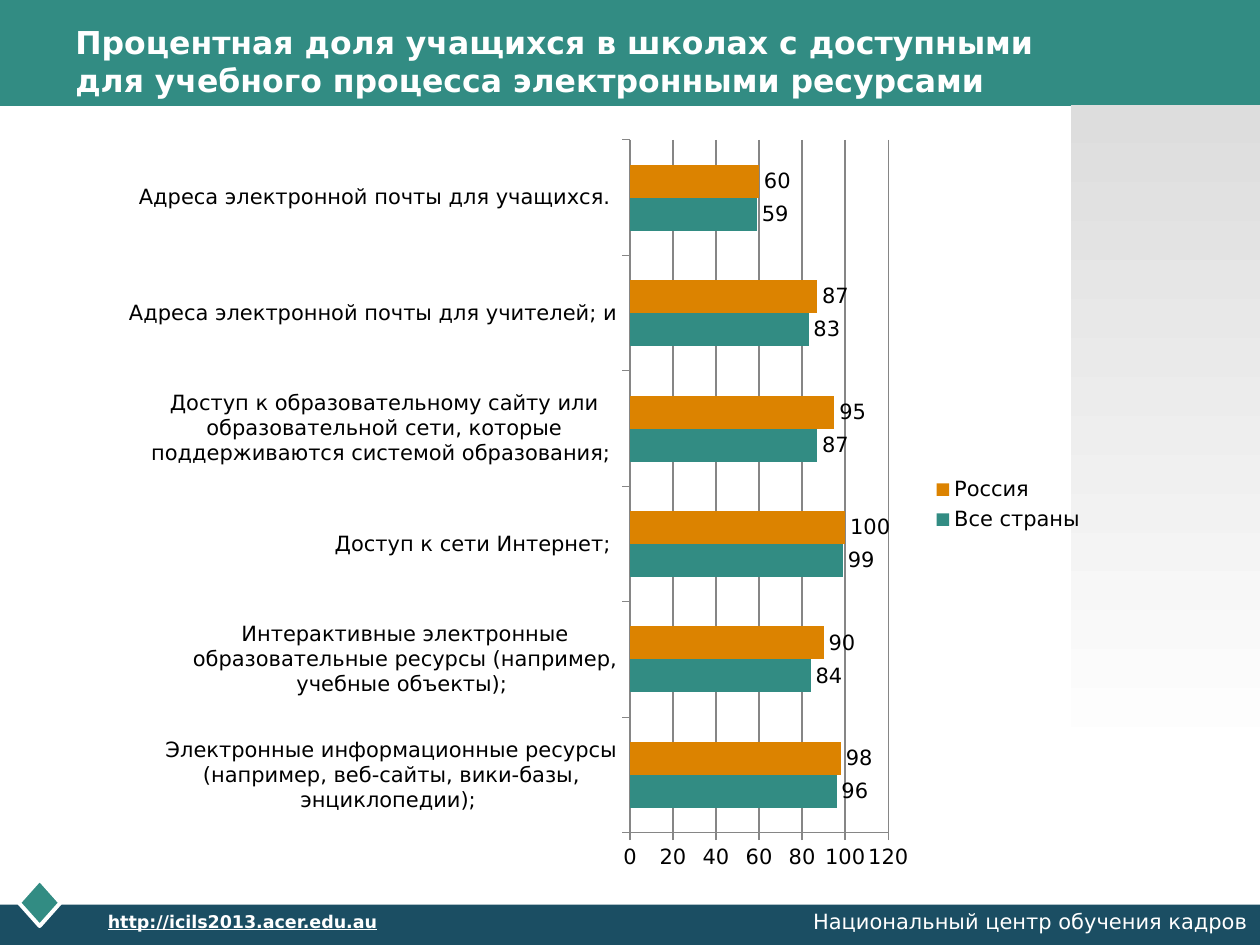
import pptx
import pptx.chart.data
import pptx.dml.color
import pptx.enum.chart
import pptx.enum.shapes
import pptx.enum.text
import pptx.util
from lxml import etree

Inches = pptx.util.Inches
Pt = pptx.util.Pt
RGBColor = pptx.dml.color.RGBColor
Shape = pptx.enum.shapes.MSO_SHAPE
Align = pptx.enum.text.PP_ALIGN
Anchor = pptx.enum.text.MSO_ANCHOR
ChartEnum = pptx.enum.chart

TEAL = RGBColor(0x32, 0x8C, 0x83)
NAVY = RGBColor(0x1B, 0x4E, 0x63)
ORANGE = RGBColor(0xDC, 0x83, 0x00)
SILVER = RGBColor(0xDD, 0xDD, 0xDD)
GRAY = RGBColor(0x86, 0x86, 0x86)
WHITE = RGBColor(0xFF, 0xFF, 0xFF)
BLACK = RGBColor(0x00, 0x00, 0x00)

CATEGORIES = [
    "Электронные информационные ресурсы (например, веб-сайты, вики-базы, энциклопедии); ",
    "Интерактивные электронные образовательные ресурсы (например, учебные объекты); ",
    "Доступ к сети Интернет; ",
    "Доступ к образовательному сайту или образовательной сети, "
    "которые поддерживаются системой образования; ",
    "Адреса электронной почты для учителей; и",
    "Адреса электронной почты для учащихся. ",
]
SERIES = [
    ("Все страны", [96, 84, 99, 87, 83, 59], TEAL),
    ("Россия", [98, 90, 100, 95, 87, 60], ORANGE),
]


class SlideBuilder:
    def __init__(self, slide, font="DejaVu Sans"):
        self.slide = slide
        self.font = font

    def shape(self, kind, left, top, width, height, color=None):
        shape = self.slide.shapes.add_shape(
            kind, Inches(left), Inches(top), Inches(width), Inches(height))
        shape.shadow.inherit = False
        shape.line.fill.background()
        if color is not None:
            shape.fill.solid()
            shape.fill.fore_color.rgb = color
        return shape

    def fading_panel(self, left, top, width, height, start, end):
        panel = self.shape(Shape.RECTANGLE, left, top, width, height)
        panel.fill.gradient()
        panel.fill.gradient_angle = 270
        for stop, color, position in zip(panel.fill.gradient_stops, (start, end), (0, 1)):
            stop.color.rgb = color
            stop.position = position

    def text(self, text, left, top, width, height, size, bold=False,
             underline=False, align=Align.LEFT, anchor=Anchor.TOP):
        box = self.slide.shapes.add_textbox(
            Inches(left), Inches(top), Inches(width), Inches(height))
        frame = box.text_frame
        frame.word_wrap = True
        frame.vertical_anchor = anchor
        frame.text = text
        para = frame.paragraphs[0]
        para.alignment = align
        for span in para.runs:
            span.font.name = self.font
            span.font.size = Pt(size)
            span.font.bold = bold
            span.font.underline = underline
            span.font.color.rgb = WHITE

    def bar_chart(self, categories, series, left, top, width, height, plot_area):
        data = pptx.chart.data.CategoryChartData()
        data.categories = categories
        for name, values, _ in series:
            data.add_series(name, values)
        chart = self.slide.shapes.add_chart(
            ChartEnum.XL_CHART_TYPE.BAR_CLUSTERED, Inches(left), Inches(top),
            Inches(width), Inches(height), data).chart
        chart.has_title = False
        chart.font.name = self.font
        chart.font.size = Pt(12)
        chart.font.color.rgb = BLACK
        chart.has_legend = True
        chart.legend.position = ChartEnum.XL_LEGEND_POSITION.RIGHT
        chart.legend.include_in_layout = False

        plot = chart.plots[0]
        plot.gap_width = 150
        plot.overlap = 0
        plot.vary_by_categories = False
        for bars, (_, _, color) in zip(plot.series, series):
            bars.format.fill.solid()
            bars.format.fill.fore_color.rgb = color
            bars.data_labels.show_value = True
            bars.data_labels.position = ChartEnum.XL_LABEL_POSITION.OUTSIDE_END

        for axis in (chart.category_axis, chart.value_axis):
            axis.major_tick_mark = ChartEnum.XL_TICK_MARK.OUTSIDE
            axis.minor_tick_mark = ChartEnum.XL_TICK_MARK.NONE
            axis.format.line.color.rgb = GRAY
        chart.value_axis.minimum_scale = 0
        chart.value_axis.maximum_scale = 120
        chart.value_axis.major_unit = 20
        chart.value_axis.has_major_gridlines = True
        chart.value_axis.major_gridlines.format.line.color.rgb = GRAY
        self.place_plot(chart, plot_area)

    def place_plot(self, chart, plot_area):
        """Fix the inner plot area, given in inches from the chart's corner."""
        area = chart.element.find(".//{*}plotArea")
        namespace = etree.QName(area).namespace
        for old in area.findall("{*}layout"):
            area.remove(old)
        layout = etree.Element(f"{{{namespace}}}layout")
        manual = etree.SubElement(layout, f"{{{namespace}}}manualLayout")
        settings = [("layoutTarget", "inner"), ("xMode", "edge"), ("yMode", "edge")]
        settings += zip("xywh", map(str, plot_area))
        for tag, value in settings:
            etree.SubElement(manual, f"{{{namespace}}}{tag}").set("val", value)
        area.insert(0, layout)


def main():
    deck = pptx.Presentation()
    deck.slide_width = Inches(10)
    deck.slide_height = Inches(7.5)
    page = SlideBuilder(deck.slides.add_slide(deck.slide_layouts[6]))

    page.shape(Shape.RECTANGLE, 0, 0, 10, 0.84, TEAL)
    page.shape(Shape.RECTANGLE, 0, 7.18, 10, 0.32, NAVY)
    diamond = page.shape(Shape.DIAMOND, 0.15, 6.98, 0.33, 0.37, TEAL)
    diamond.line.color.rgb = WHITE
    diamond.line.width = Pt(2.25)
    page.fading_panel(8.5, 0.83, 1.5, 5.25, SILVER, WHITE)

    page.text("Процентная доля учащихся в школах с доступными\v"
              "для учебного процесса электронными ресурсами",
              0.5, 0.17, 9, 0.62, 18, bold=True, anchor=Anchor.MIDDLE)
    page.text("http://icils2013.acer.edu.au", 0.42, 7.18, 2.67, 0.23, 10,
              bold=True, underline=True, align=Align.RIGHT)
    page.text("Национальный центр обучения кадров", 6.05, 7.16, 3.95, 0.26, 12,
              align=Align.RIGHT)
    chart_width, chart_height = 7.8, 6.03
    page.bar_chart(CATEGORIES, SERIES, 0.91, 0.99, chart_width, chart_height,
                   plot_area=(4.09 / chart_width, 0.12 / chart_height,
                              2.05 / chart_width, 5.5 / chart_height))

    deck.save("out.pptx")


if __name__ == "__main__":
    main()
